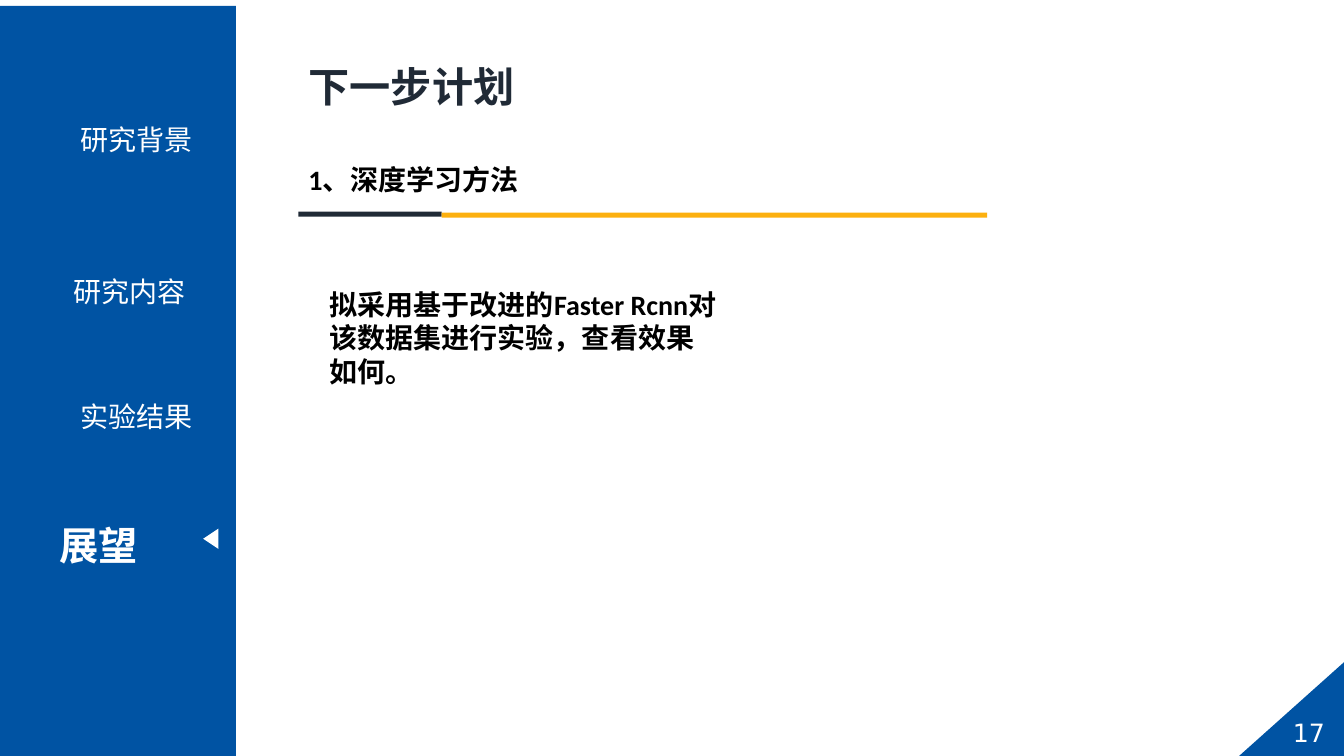
"""Build the next-step plan slide with its navigation sidebar."""
from dataclasses import dataclass
from typing import Any

from lxml.etree import SubElement
from pptx import Presentation
from pptx.dml.color import RGBColor
from pptx.enum.shapes import MSO_SHAPE as Shape
from pptx.enum.text import MSO_ANCHOR as Anchor, MSO_AUTO_SIZE as AutoSize, PP_ALIGN as Align
from pptx.oxml.ns import qn
from pptx.util import Inches, Pt


@dataclass(frozen=True)
class Theme:
    """Colours, fonts and type sizes."""
    blue: str = "0053A3"
    navy: str = "202A36"
    gold: str = "FCB00F"
    white: str = "FFFFFF"
    black: str = "000000"
    title_font: str = "Arial"
    body_font: str = "Calibri"
    menu_font: str = "Noto Sans CJK SC"
    number_font: str = "DejaVu Sans"
    title_size: float = 29.4
    active_size: float = 28
    body_size: float = 20
    number_size: float = 18


@dataclass
class SlideBuilder:
    """Adds styled elements to the current slide."""
    theme: Theme
    page: Any

    def fill_text(self, box, words, font, size, color, bold=False, align=Align.LEFT, wrap=True):
        """Put formatted words into a box."""
        frame = box.text_frame
        frame.text = words
        frame.word_wrap = wrap
        frame.auto_size = AutoSize.NONE
        frame.vertical_anchor = Anchor.TOP
        para = frame.paragraphs[0]
        para.alignment = align
        span = para.runs[0]
        span.font.name = font
        span.font.size = Pt(size)
        span.font.bold = bold
        span.font.color.rgb = RGBColor.from_string(color)
        east_asian = SubElement(span.font._element, qn("a:ea"))
        east_asian.set("typeface", self.theme.menu_font)

    def title(self, words, left, top, width, height):
        """Place and format the title placeholder."""
        box = self.page.shapes.title
        box.left, box.top = Inches(left), Inches(top)
        box.width, box.height = Inches(width), Inches(height)
        theme = self.theme
        self.fill_text(box, words, theme.title_font, theme.title_size, theme.navy,
                       bold=True, wrap=False)

    def text(self, words, place, font, size, color, **style):
        """Add a text box."""
        box = self.page.shapes.add_textbox(*map(Inches, place))
        self.fill_text(box, words, font, size, color, **style)

    def shape(self, kind, place, color, rotation=0):
        """Add a plain filled shape."""
        shape = self.page.shapes.add_shape(kind, *map(Inches, place))
        shape.shadow.inherit = False
        shape.fill.solid()
        shape.fill.fore_color.rgb = RGBColor.from_string(color)
        shape.line.fill.background()
        shape.rotation = rotation
        return shape

    def page_number(self, words, place):
        """Add the corner triangle that holds the page number."""
        theme = self.theme
        corner = self.shape(Shape.RIGHT_TRIANGLE, place, theme.blue)
        corner._element.spPr.xfrm.set("flipH", "1")
        self.fill_text(corner, words, theme.number_font, theme.number_size, theme.white,
                       align=Align.CENTER, wrap=False)
        corner.text_frame.vertical_anchor = Anchor.MIDDLE


def main():
    """Build and save the deck."""
    deck = Presentation()
    deck.slide_width, deck.slide_height = Inches(13.33), Inches(7.5)
    theme = Theme()
    slide = SlideBuilder(theme, deck.slides.add_slide(deck.slide_layouts[5]))

    slide.title("下一步计划", 2.96, 0.56, 2.25, 0.59)
    slide.page_number("17", (12.29, 6.57, 1.04, 0.93))
    slide.shape(Shape.RECTANGLE, (2.96, 2.1, 1.42, 0.05), theme.navy)
    slide.shape(Shape.RECTANGLE, (4.38, 2.11, 5.41, 0.05), theme.gold)

    body_texts = [
        ("拟采用基于改进的Faster Rcnn对该数据集进行实验，查看效果如何。", (3.17, 2.8, 4.07, 1.11)),
        ("1、深度学习方法", (2.96, 1.56, 3.3, 0.44)),
    ]
    for words, place in body_texts:
        slide.text(words, place, theme.body_font, theme.body_size, theme.black, bold=True)

    slide.shape(Shape.RECTANGLE, (0, 0.06, 2.34, 7.5), theme.blue)
    menu_items = [
        ("研究背景", (0.21, 1.17, 1.8, 0.91)),
        ("研究内容", (0.29, 2.67, 1.65, 0.77)),
        ("实验结果", (0.58, 3.91, 1.43, 0.44)),
    ]
    for words, place in menu_items:
        slide.text(words, place, theme.menu_font, theme.body_size, theme.white, align=Align.RIGHT)
    slide.shape(Shape.ISOSCELES_TRIANGLE, (1.99, 5.27, 0.2, 0.15), theme.white, rotation=270)
    slide.text("展望", (0.49, 5.12, 1.39, 0.57), theme.menu_font, theme.active_size,
               theme.white, bold=True)

    deck.save("out.pptx")


if __name__ == "__main__":
    main()
